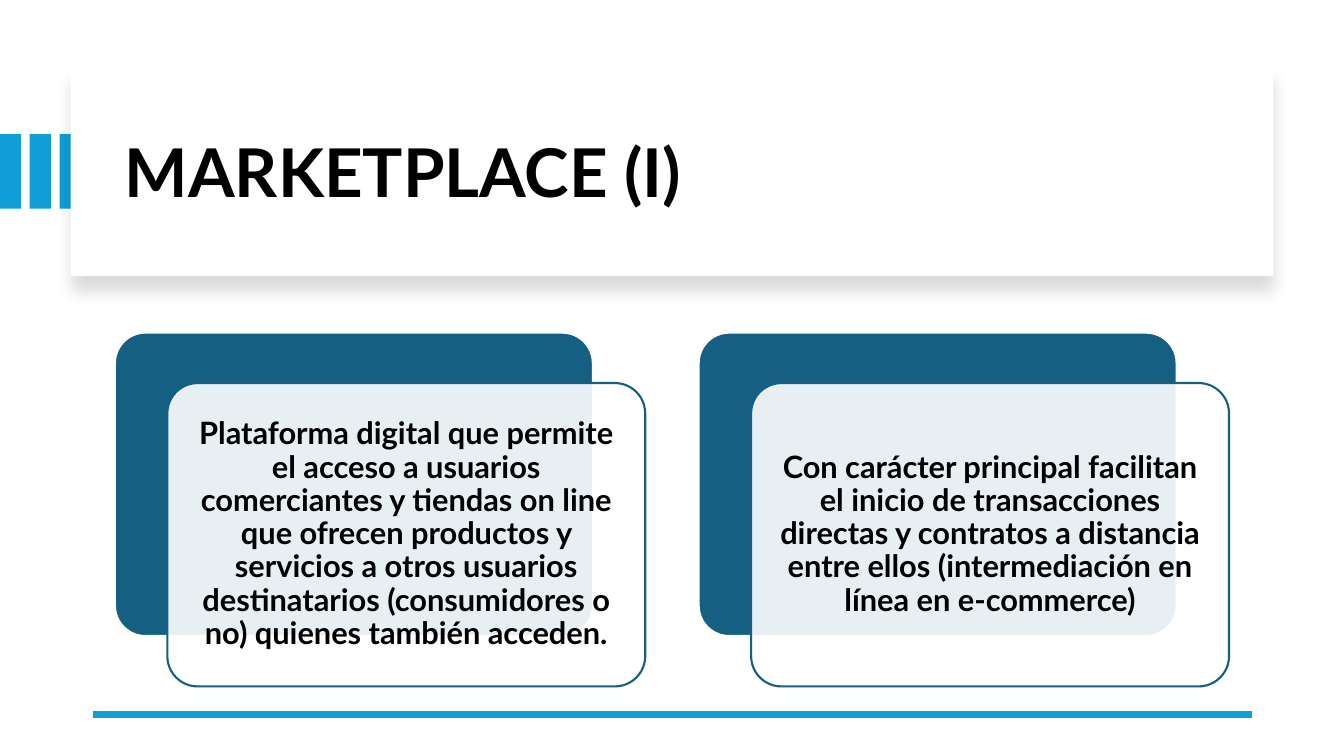
from dataclasses import dataclass
from typing import Optional

from lxml import etree
from pptx import Presentation
from pptx import util as u
from pptx.dml.color import RGBColor
from pptx.enum import shapes, text
from pptx.oxml import ns

WHITE = RGBColor(0xFF, 0xFF, 0xFF)
BLACK = RGBColor(0x00, 0x00, 0x00)
SKY = RGBColor(0x0F, 0x9E, 0xD5)
TEAL = RGBColor(0x15, 0x60, 0x82)

CARD_WIDTH, CARD_HEIGHT = 4.74, 3.01
CARD_TOP = 3.3
CARD_OFFSET_X, CARD_OFFSET_Y = 0.52, 0.5
TEXT_MARGIN = 0.09


@dataclass(frozen=True)
class Card:
    left: float
    wording: str


CARDS = (
    Card(1.14, "Plataforma digital que permite el acceso a usuarios comerciantes "
               "y tiendas on line que ofrecen productos y servicios a otros usuarios "
               "destinatarios (consumidores o no) quienes también acceden."),
    Card(6.93, "Con carácter principal facilitan el inicio de transacciones directas "
               "y contratos a distancia entre ellos (intermediación en línea en "
               "e-commerce)"),
)


def add_block(page, left: float, top: float, width: float, height: float,
              fill: RGBColor, line: Optional[RGBColor] = None,
              rounding: Optional[float] = None, opacity: int = 100):
    kind = shapes.MSO_SHAPE.RECTANGLE
    if rounding is not None:
        kind = shapes.MSO_SHAPE.ROUNDED_RECTANGLE
    block = page.shapes.add_shape(kind, u.Inches(left), u.Inches(top),
                                  u.Inches(width), u.Inches(height))
    if rounding is not None:
        block.adjustments[0] = rounding
    block.shadow.inherit = False
    block.fill.solid()
    block.fill.fore_color.rgb = fill
    if opacity < 100:
        color = block._element.spPr.find(ns.qn("a:solidFill")).find(ns.qn("a:srgbClr"))
        etree.SubElement(color, ns.qn("a:alpha"), val=str(opacity * 1000))
    if line is None:
        block.line.fill.background()
    else:
        block.line.color.rgb = line
        block.line.width = u.Pt(1.5)
    return block


def add_soft_shadow(block) -> None:
    effects = block._element.spPr.find(ns.qn("a:effectLst"))
    shadow = etree.SubElement(effects, ns.qn("a:outerShdw"), blurRad=str(u.Pt(11)),
                              dist=str(u.Pt(10)), dir="5400000", algn="t",
                              rotWithShape="0")
    color = etree.SubElement(shadow, ns.qn("a:srgbClr"), val=str(BLACK))
    etree.SubElement(color, ns.qn("a:alpha"), val="15000")


def add_text(page, wording: str, left: float, top: float, width: float, height: float,
             *, size: float, align: text.PP_ALIGN, margin_x: float,
             margin_y: float) -> None:
    box = page.shapes.add_textbox(u.Inches(left), u.Inches(top),
                                  u.Inches(width), u.Inches(height))
    frame = box.text_frame
    frame.word_wrap = True
    frame.vertical_anchor = text.MSO_ANCHOR.MIDDLE
    frame.margin_left = frame.margin_right = u.Inches(margin_x)
    frame.margin_top = frame.margin_bottom = u.Inches(margin_y)
    para = frame.paragraphs[0]
    para.alignment = align
    para.line_spacing = 0.9
    span = para.add_run()
    span.text = wording
    span.font.name = "Lato"
    span.font.size = u.Pt(size)
    span.font.bold = True
    span.font.color.rgb = BLACK


def add_rule(page, start: float, end: float, top: float) -> None:
    rule = page.shapes.add_connector(shapes.MSO_CONNECTOR.STRAIGHT, u.Inches(start),
                                     u.Inches(top), u.Inches(end), u.Inches(top))
    rule.line.color.rgb = SKY
    rule.line.width = u.Pt(4.5)
    etree.SubElement(rule._element.spPr, ns.qn("a:effectLst"))


def add_card(page, card: Card) -> None:
    add_block(page, card.left, CARD_TOP, CARD_WIDTH, CARD_HEIGHT, TEAL,
              line=WHITE, rounding=0.1)
    left, top = card.left + CARD_OFFSET_X, CARD_TOP + CARD_OFFSET_Y
    add_block(page, left, top, CARD_WIDTH, CARD_HEIGHT, WHITE,
              line=TEAL, rounding=0.1, opacity=90)
    add_text(page, card.wording, left + TEXT_MARGIN, top + TEXT_MARGIN,
             CARD_WIDTH - 2 * TEXT_MARGIN, CARD_HEIGHT - 2 * TEXT_MARGIN,
             size=22, align=text.PP_ALIGN.CENTER,
             margin_x=TEXT_MARGIN, margin_y=TEXT_MARGIN)


def main() -> None:
    deck = Presentation()
    deck.slide_width, deck.slide_height = u.Inches(13.33), u.Inches(7.5)
    page = deck.slides.add_slide(deck.slide_layouts[6])

    for index in range(3):
        add_block(page, index * 0.295, 1.33, 0.21, 0.74, SKY)
    banner = add_block(page, 0.7, 0.67, 11.93, 2.07, WHITE)
    add_soft_shadow(banner)
    add_text(page, "MARKETPLACE (I)", 1.14, 0.89, 11.13, 1.7, size=48,
             align=text.PP_ALIGN.LEFT, margin_x=0.1, margin_y=0.05)
    add_rule(page, 12.42, 0.92, 7.09)
    for card in CARDS:
        add_card(page, card)

    deck.save("out.pptx")


if __name__ == "__main__":
    main()
